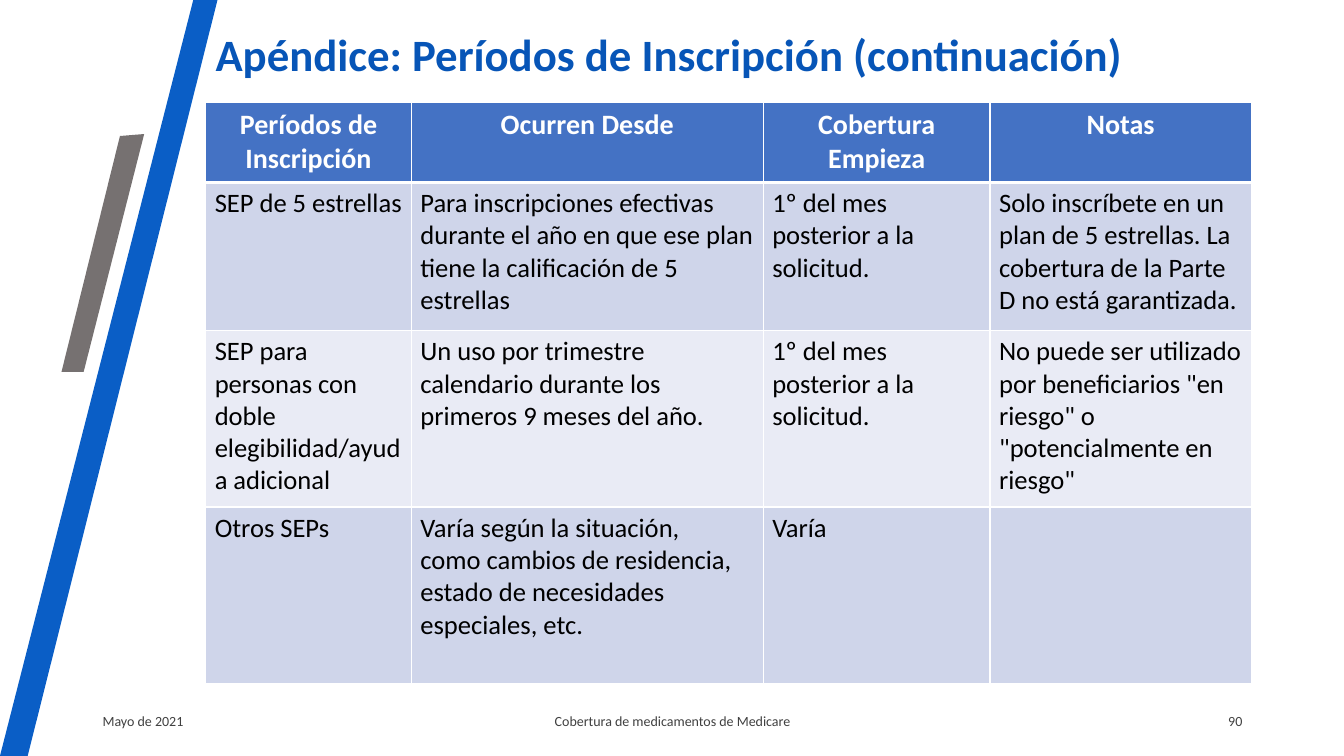
from pptx import Presentation
from pptx.dml.color import RGBColor
from pptx.enum.text import MSO_ANCHOR, PP_ALIGN
from pptx.oxml import parse_xml
from pptx.oxml.ns import nsdecls
from pptx.util import Inches, Pt

LEFT, CENTER, RIGHT = PP_ALIGN.LEFT, PP_ALIGN.CENTER, PP_ALIGN.RIGHT

BLUE_STRIPE = [(1.92, -0.01), (2.16, -0.01), (0.27, 7.52), (0, 7.5)]
GREY_STRIPE = [(1.19, 1.35), (1.43, 1.33), (0.83, 3.69), (0.61, 3.69)]

COL_WIDTHS = [2.04, 3.49, 2.25, 2.59]
ROW_HEIGHTS = [0.79, 1.47, 1.75, 1.75]
ROWS = [
    ["Períodos de Inscripción", "Ocurren Desde", "Cobertura Empieza", "Notas"],
    ["SEP de 5 estrellas",
     "Para inscripciones efectivas durante el año en que ese plan tiene la calificación de 5 estrellas",
     "1º del mes posterior a la solicitud.",
     "Solo inscríbete en un plan de 5 estrellas. La cobertura de la Parte D no está garantizada."],
    ["SEP para personas con doble elegibilidad/ayuda adicional",
     "Un uso por trimestre calendario durante los primeros 9 meses del año.",
     "1º del mes posterior a la solicitud.",
     'No puede ser utilizado por beneficiarios "en riesgo" o "potencialmente en riesgo"'],
    ["Otros SEPs",
     "Varía según la situación, \ncomo cambios de residencia, estado de necesidades especiales, etc.",
     "Varía", ""],
]


def rgb(color):
    return RGBColor.from_string(color)


def write(tf, text, size=10, color="404040", bold=False, align=LEFT, spacing=None):
    p = tf.paragraphs[0]
    p.alignment = align
    p.line_spacing = spacing
    p.font.size = Pt(size)
    for i, line in enumerate(text.split("\n") if text else []):
        if i:
            p.add_line_break()
        r = p.add_run()
        r.text = line
        r.font.name = "Calibri"
        r.font.size = Pt(size)
        r.font.bold = bold
        r.font.color.rgb = rgb(color)


def add_text(s, text, x, y, w, h, **fmt):
    tf = s.shapes.add_textbox(Inches(x), Inches(y), Inches(w), Inches(h)).text_frame
    tf.word_wrap = True
    tf.vertical_anchor = MSO_ANCHOR.MIDDLE
    write(tf, text, **fmt)


def add_stripe(s, points, color):
    start, *rest = [(Inches(x), Inches(y)) for x, y in points]
    builder = s.shapes.build_freeform(*start)
    builder.add_line_segments(rest, close=True)
    sp = builder.convert_to_shape()
    sp.shadow.inherit = False
    sp.fill.solid()
    sp.fill.fore_color.rgb = rgb(color)
    sp.line.fill.background()


def set_borders(cell, **widths):
    """Add white borders; widths in points, in the order lnL, lnR, lnT, lnB."""
    tcPr = cell._tc.get_or_add_tcPr()
    for i, (tag, width) in enumerate(widths.items()):
        tcPr.insert(i, parse_xml(
            f'<a:{tag} {nsdecls("a")} w="{Pt(width)}"><a:solidFill>'
            f'<a:srgbClr val="FFFFFF"/></a:solidFill></a:{tag}>'))


def add_periods_table(s, x, y):
    table = s.shapes.add_table(
        len(ROWS), len(COL_WIDTHS), Inches(x), Inches(y),
        Inches(sum(COL_WIDTHS)), Inches(sum(ROW_HEIGHTS))).table
    for col, width in zip(table.columns, COL_WIDTHS):
        col.width = Inches(width)
    for i, (row, height) in enumerate(zip(table.rows, ROW_HEIGHTS)):
        row.height = Inches(height)
        header = i == 0
        fill = "4472C4" if header else "CFD5EA" if i % 2 else "E9EBF5"
        fmt = (dict(size=20, color="FFFFFF", bold=True, align=CENTER) if header
               else dict(size=19, color="000000"))
        for cell, text in zip(row.cells, ROWS[i]):
            cell.margin_left = cell.margin_right = Inches(0.09)
            cell.margin_top = cell.margin_bottom = Inches(0.05)
            cell.fill.solid()
            cell.fill.fore_color.rgb = rgb(fill)
            write(cell.text_frame, text, **fmt)
            set_borders(cell, lnL=1, lnR=1, lnT=3 if i == 1 else 1,
                        lnB=3 if header else 1)


def add_footer(s, y, h):
    add_text(s, "Mayo de 2021", 0.92, y, 3, h)
    add_text(s, "Cobertura de medicamentos de Medicare", 4.42, y, 4.5, h, align=CENTER)
    add_text(s, "90", 9.42, y, 3, h, align=RIGHT)


def build_slide(prs):
    s = prs.slides.add_slide(prs.slide_layouts[6])
    # Side stripes
    add_stripe(s, BLUE_STRIPE, "0A5EC6")
    add_stripe(s, GREY_STRIPE, "767171")
    # Footer, table and title
    add_footer(s, 6.95, 0.4)
    add_periods_table(s, 2.04, 1.02)
    add_text(s, "Apéndice: Períodos de Inscripción (continuación)", 2.04, 0.01, 10.76, 1.12,
             size=32, color="0755B7", bold=True, spacing=0.9)


def main():
    prs = Presentation()
    prs.slide_width, prs.slide_height = Inches(13.33), Inches(7.5)
    build_slide(prs)
    prs.save("out.pptx")


if __name__ == "__main__":
    main()
